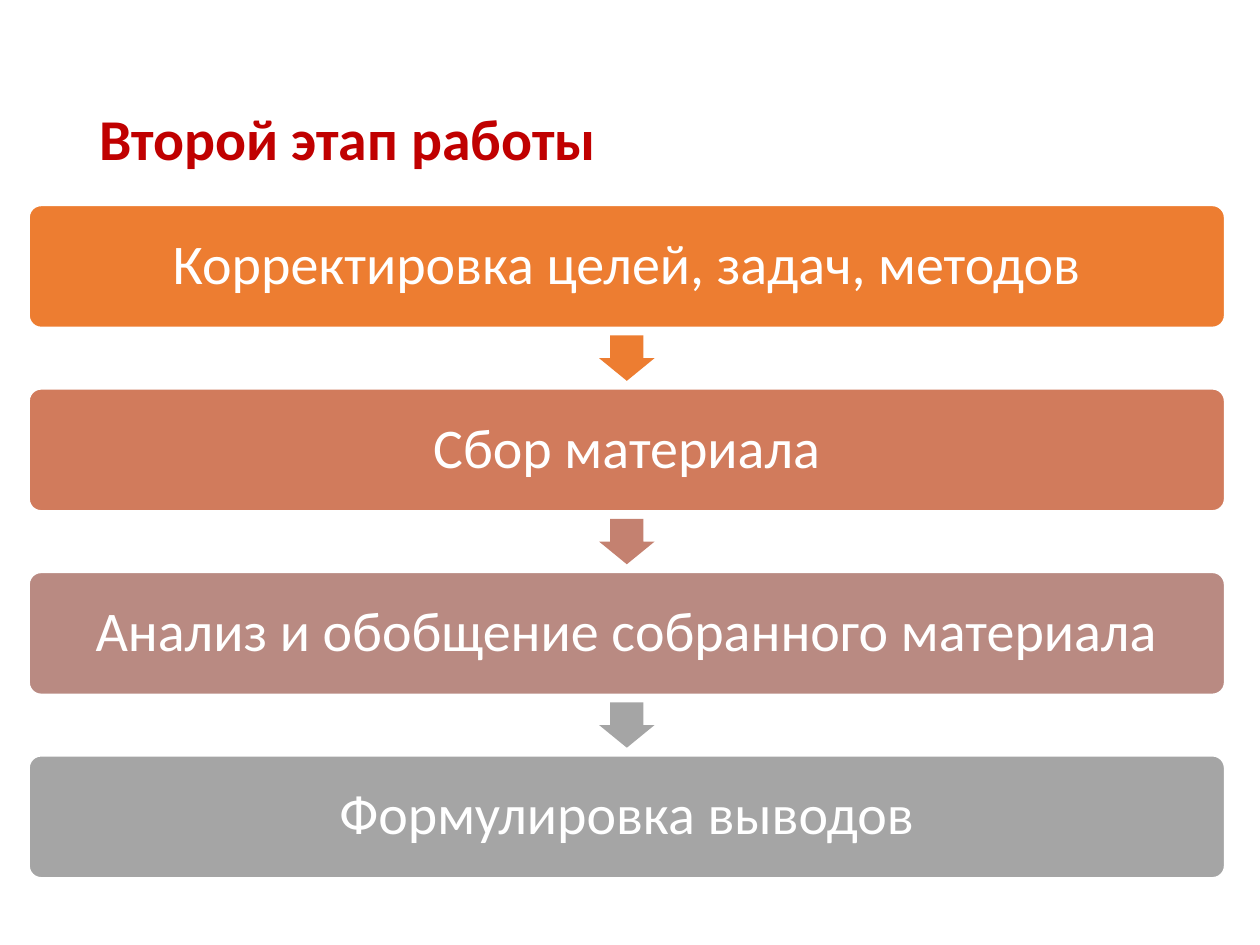
from pptx import Presentation
from pptx.dml.color import RGBColor
from pptx.enum.shapes import MSO_SHAPE
from pptx.enum.text import MSO_ANCHOR, PP_ALIGN
from pptx.util import Inches, Pt

ROUNDED = MSO_SHAPE.ROUNDED_RECTANGLE
DOWN_ARROW = MSO_SHAPE.DOWN_ARROW
MIDDLE = MSO_ANCHOR.MIDDLE
LEFT, CENTER = PP_ALIGN.LEFT, PP_ALIGN.CENTER

WHITE = RGBColor(0xFF, 0xFF, 0xFF)
RED = RGBColor(0xC0, 0x00, 0x00)
ORANGE = RGBColor(0xED, 0x7D, 0x31)
TERRACOTTA = RGBColor(0xD1, 0x7B, 0x5C)
CLAY = RGBColor(0xC4, 0x81, 0x70)
ROSE = RGBColor(0xB9, 0x8A, 0x82)
GRAY = RGBColor(0xA5, 0xA5, 0xA5)

TITLE = "Второй этап работы"
STEPS = [
    ("Корректировка целей, задач, методов", ORANGE),
    ("Сбор материала", TERRACOTTA),
    ("Анализ и обобщение собранного материала", ROSE),
    ("Формулировка выводов", GRAY),
]
ARROW_COLORS = [ORANGE, CLAY, GRAY]

STEP_LEFT, STEP_TOP = 0.23, 1.63
STEP_WIDTH, STEP_HEIGHT = 9.49, 0.97
STEP_PITCH = 1.456
ARROW_WIDTH, ARROW_HEIGHT = 0.44, 0.36
PADDING = 0.16


def add_block(slide, kind, box, color):
    shape = slide.shapes.add_shape(kind, *map(Inches, box))
    shape.shadow.inherit = False
    shape.fill.solid()
    shape.fill.fore_color.rgb = color
    shape.line.fill.background()
    return shape


def write(shape, text, size, color, alignment, bold=False):
    frame = shape.text_frame
    frame.word_wrap = True
    frame.vertical_anchor = MIDDLE
    frame.text = text
    paragraph = frame.paragraphs[0]
    paragraph.alignment = alignment
    paragraph.line_spacing = 0.9
    font = paragraph.runs[0].font
    font.name = "Calibri"
    font.size = Pt(size)
    font.bold = bold
    font.color.rgb = color


def add_step(slide, top, text, color):
    box = (STEP_LEFT, top, STEP_WIDTH, STEP_HEIGHT)
    step = add_block(slide, ROUNDED, box, color)
    step.adjustments[0] = 0.1
    step.line.color.rgb = WHITE
    step.line.width = Pt(1)
    frame = step.text_frame
    frame.margin_left = frame.margin_right = Inches(PADDING)
    frame.margin_top = frame.margin_bottom = Inches(PADDING)
    write(step, text, 32, WHITE, CENTER)


def add_arrow(slide, step_top, color):
    gap = STEP_PITCH - STEP_HEIGHT
    left = STEP_LEFT + (STEP_WIDTH - ARROW_WIDTH) / 2
    top = step_top + STEP_HEIGHT + (gap - ARROW_HEIGHT) / 2
    arrow = add_block(slide, DOWN_ARROW, (left, top, ARROW_WIDTH, ARROW_HEIGHT), color)
    arrow.adjustments[0] = 0.6
    arrow.adjustments[1] = 0.5


def main():
    presentation = Presentation()
    presentation.slide_width = Inches(10)
    presentation.slide_height = Inches(7.5)
    slide = presentation.slides.add_slide(presentation.slide_layouts[6])

    for index, (text, color) in enumerate(STEPS):
        top = STEP_TOP + index * STEP_PITCH
        add_step(slide, top, text, color)
        if index < len(ARROW_COLORS):
            add_arrow(slide, top, ARROW_COLORS[index])

    title = slide.shapes.add_textbox(Inches(0.69), Inches(0.4), Inches(8.62), Inches(1.45))
    write(title, TITLE, 33, RED, LEFT, bold=True)
    presentation.save("out.pptx")


if __name__ == "__main__":
    main()
